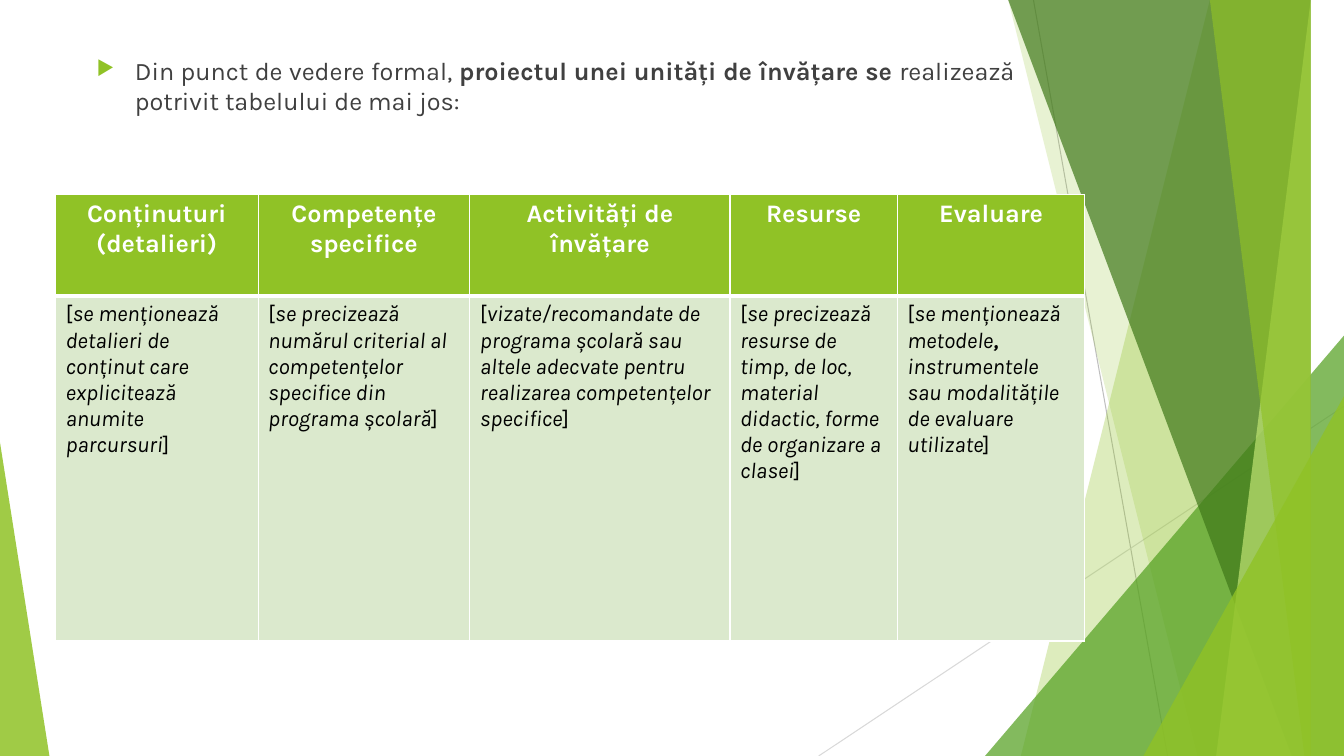
from typing import NamedTuple

from lxml import etree
from pptx import Presentation
from pptx.dml.color import RGBColor
from pptx.enum.shapes import MSO_CONNECTOR, MSO_SHAPE
from pptx.enum.text import PP_ALIGN
from pptx.oxml.ns import qn
from pptx.util import Inches, Pt

STRAIGHT = MSO_CONNECTOR.STRAIGHT
TRIANGLE = MSO_SHAPE.ISOSCELES_TRIANGLE
CENTER, JUSTIFY, LEFT = PP_ALIGN.CENTER, PP_ALIGN.JUSTIFY, PP_ALIGN.LEFT
FONT = "Karla"
WIDTH, HEIGHT = 13.33, 7.5
COLORS = {
    "lime": "90C226", "green": "54A021", "forest": "3F7819", "pale": "C0E474",
    "mint": "DBE9CD", "white": "FFFFFF", "black": "000000", "ink": "404040",
    "gray": "BFBFBF", "silver": "D9D9D9",
}


class Ray(NamedTuple):
    start: tuple[float, float]
    end: tuple[float, float]
    color: str


class Band(NamedTuple):
    top_left: float
    bottom_left: float
    color: str
    opacity: int


class Corner(NamedTuple):
    left: float
    top: float
    width: float
    peak: float
    color: str
    opacity: int


class Span(NamedTuple):
    text: str
    bold: bool = False
    italic: bool = False


class Column(NamedTuple):
    width: float
    heading: list[str]
    guidance: list[Span]


RAYS = [
    Ray((10.25, 0), (11.58, HEIGHT), "gray"),
    Ray((WIDTH, 4.03), (8.12, HEIGHT), "silver"),
]
FACETS = [
    Band(12.28, 10.04, "lime", 30),
    Band(10.5, 11.83, "lime", 20),
    Corner(9.77, 3.33, 3.56, 1, "green", 72),
    Band(10.21, 12.91, "forest", 70),
    Band(13.03, 11.92, "pale", 70),
    Band(11.96, 13.18, "lime", 65),
    Corner(11.34, 3.93, 1.99, 1, "lime", 80),
    Corner(0, 4.39, 0.49, 0, "lime", 85),
]
INTRO = [
    Span("Din punct de vedere formal, "),
    Span("proiectul unei unități de învățare se ", bold=True),
    Span("realizează potrivit tabelului de mai jos:"),
]
COLUMNS = [
    Column(2.01, ["Conținuturi", "(detalieri)"], [
        Span("se menționează detalieri de conținut care explicitează anumite parcursuri", italic=True)]),
    Column(2.1, ["Competențe specifice"], [
        Span("se precizează numărul criterial al competențelor specifice din programa școlară", italic=True)]),
    Column(2.58, ["Activități de învățare"], [
        Span("vizate/recomandate de programa școlară sau altele adecvate pentru "
             "realizarea competențelor specifice", italic=True)]),
    Column(1.66, ["Resurse"], [
        Span("se precizează resurse de timp, de loc, material didactic, forme de organizare a clasei", italic=True)]),
    Column(1.86, ["Evaluare"], [
        Span("se menționează metodele", italic=True),
        Span(", ", bold=True, italic=True),
        Span("instrumentele sau modalitățile de evaluare utilizate", italic=True)]),
]
ROW_HEIGHTS = [1.01, 3.42]


def rgb(color: str) -> RGBColor:
    return RGBColor.from_string(COLORS[color])


def add_ray(slide, ray: Ray) -> None:
    line = slide.shapes.add_connector(STRAIGHT, *map(Inches, ray.start + ray.end))
    line.line.color.rgb = rgb(ray.color)
    line.line.width = Pt(0.75)
    etree.SubElement(line._element.spPr, qn("a:effectLst"))


def add_facet(slide, facet: Band | Corner) -> None:
    if isinstance(facet, Band):
        outline = slide.shapes.build_freeform(facet.top_left, 0, Inches(1))
        outline.add_line_segments([(WIDTH, 0), (WIDTH, HEIGHT), (facet.bottom_left, HEIGHT)])
        shape = outline.convert_to_shape()
    else:
        shape = slide.shapes.add_shape(
            TRIANGLE, Inches(facet.left), Inches(facet.top),
            Inches(facet.width), Inches(HEIGHT - facet.top))
        shape.adjustments[0] = facet.peak
    shape.shadow.inherit = False
    shape.line.fill.background()
    shape.fill.solid()
    shape.fill.fore_color.rgb = rgb(facet.color)
    tint = shape._element.spPr.find(qn("a:solidFill"))[0]
    etree.SubElement(tint, qn("a:alpha"), val=str(facet.opacity * 1000))


def write_spans(paragraph, spans: list[Span], size: int, color: str, align) -> None:
    paragraph.alignment = align
    paragraph.font.name = FONT
    paragraph.font.size = Pt(size)
    paragraph.font.color.rgb = rgb(color)
    for span in spans:
        run = paragraph.add_run()
        run.text = span.text
        run.font.bold = span.bold
        run.font.italic = span.italic


def add_intro(slide) -> None:
    box = slide.shapes.add_textbox(Inches(0.86), Inches(0.5), Inches(9.3), Inches(1.15))
    box.text_frame.word_wrap = True
    paragraph = box.text_frame.paragraphs[0]
    write_spans(paragraph, INTRO, 18, "ink", JUSTIFY)
    paragraph.space_before = Pt(10)
    properties = paragraph._p.get_or_add_pPr()
    properties.set("marL", str(Inches(0.38)))
    properties.set("indent", str(-Inches(0.38)))
    bullet_color = etree.Element(qn("a:buClr"))
    etree.SubElement(bullet_color, qn("a:srgbClr"), val=COLORS["lime"])
    bullet_size = etree.Element(qn("a:buSzPct"), val="80000")
    bullet = etree.Element(qn("a:buChar"), char="▶")
    font_defaults = properties.find(qn("a:defRPr"))
    for part in (bullet_color, bullet_size, bullet):
        font_defaults.addprevious(part)


def style_cell(cell, color: str, borders: dict[str, int]) -> None:
    properties = cell._tc.get_or_add_tcPr()
    for side, points in borders.items():
        border = etree.SubElement(properties, qn(f"a:ln{side}"), w=str(Pt(points)))
        fill = etree.SubElement(border, qn("a:solidFill"))
        etree.SubElement(fill, qn("a:srgbClr"), val=COLORS["white"])
    cell.fill.solid()
    cell.fill.fore_color.rgb = rgb(color)


def add_plan(slide) -> None:
    plan = slide.shapes.add_table(
        len(ROW_HEIGHTS), len(COLUMNS), Inches(0.55), Inches(1.93),
        Inches(sum(column.width for column in COLUMNS)), Inches(sum(ROW_HEIGHTS))).table
    for row, height in zip(plan.rows, ROW_HEIGHTS):
        row.height = Inches(height)
    for index, column in enumerate(COLUMNS):
        plan.columns[index].width = Inches(column.width)
        heading, guidance = plan.cell(0, index), plan.cell(1, index)
        style_cell(heading, "lime", {"L": 1, "R": 1, "T": 1, "B": 3})
        style_cell(guidance, "mint", {"L": 1, "R": 1, "T": 3, "B": 1})
        for number, text in enumerate(column.heading):
            frame = heading.text_frame
            paragraph = frame.add_paragraph() if number else frame.paragraphs[0]
            write_spans(paragraph, [Span(text, bold=True)], 18, "white", CENTER)
        bracketed = [Span("["), *column.guidance, Span("]")]
        write_spans(guidance.text_frame.paragraphs[0], bracketed, 16, "black", LEFT)


def main() -> None:
    presentation = Presentation()
    presentation.slide_width = Inches(WIDTH)
    presentation.slide_height = Inches(HEIGHT)
    slide = presentation.slides.add_slide(presentation.slide_layouts[6])
    for ray in RAYS:
        add_ray(slide, ray)
    for facet in FACETS:
        add_facet(slide, facet)
    add_intro(slide)
    add_plan(slide)
    presentation.save("out.pptx")


if __name__ == "__main__":
    main()
